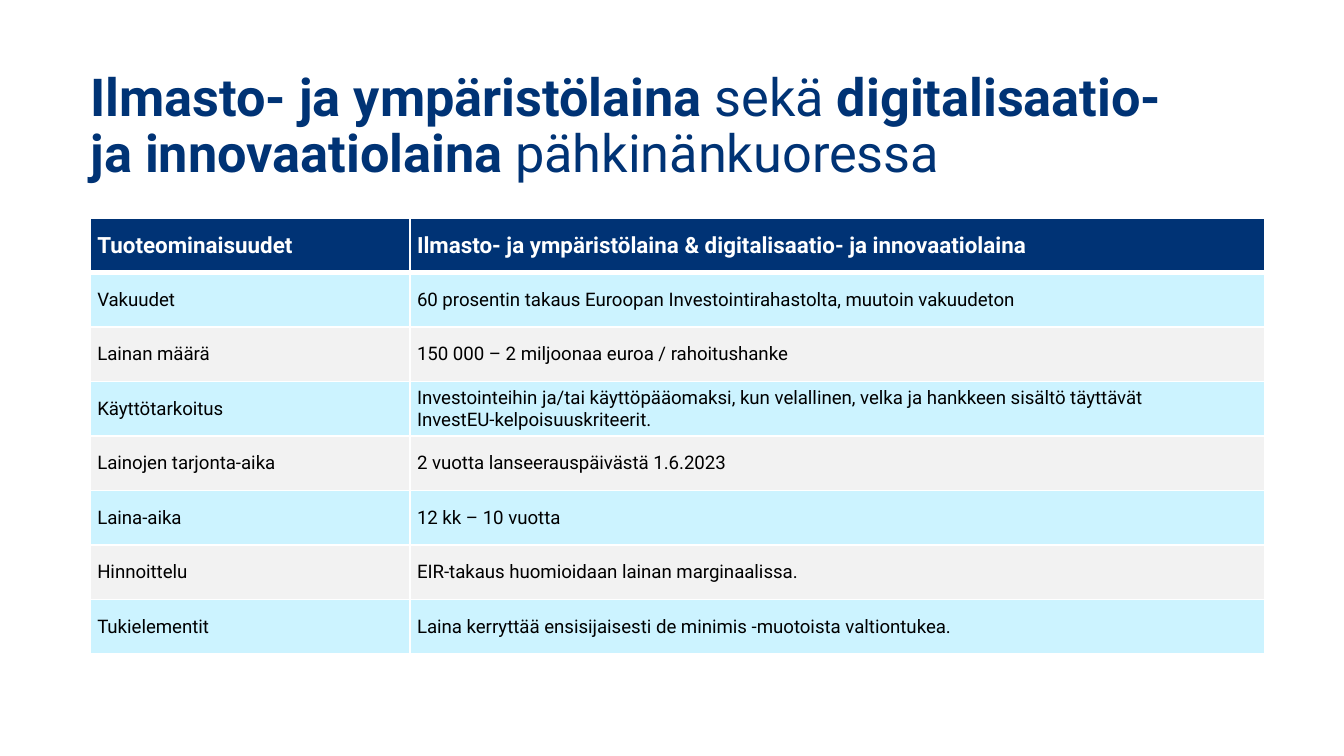
"""Build a slide that sums up two loan products in a table."""
from lxml.etree import SubElement
from pptx import Presentation
from pptx.dml.color import RGBColor
from pptx.enum.text import MSO_ANCHOR
from pptx.oxml.ns import qn
from pptx.util import Pt

NAVY = RGBColor(0x00, 0x33, 0x75)
SKY = RGBColor(0xCC, 0xF3, 0xFF)
GREY = RGBColor(0xF2, 0xF2, 0xF2)
WHITE = RGBColor(0xFF, 0xFF, 0xFF)
BLACK = RGBColor(0x00, 0x00, 0x00)
FONT = "Roboto"

TITLE = [
    ("Ilmasto- ja ympäristölaina ", True),
    ("sekä ", False),
    ("digitalisaatio- ja innovaatiolaina ", True),
    ("pähkinänkuoressa", False),
]
ROWS = [
    ("Tuoteominaisuudet", "Ilmasto- ja ympäristölaina & digitalisaatio- ja innovaatiolaina"),
    ("Vakuudet", "60 prosentin takaus Euroopan Investointirahastolta, muutoin vakuudeton"),
    ("Lainan määrä", "150 000 – 2 miljoonaa euroa / rahoitushanke"),
    ("Käyttötarkoitus", "Investointeihin ja/tai käyttöpääomaksi, kun velallinen, velka ja hankkeen "
                        "sisältö täyttävät \nInvestEU-kelpoisuuskriteerit."),
    ("Lainojen tarjonta-aika", "2 vuotta lanseerauspäivästä 1.6.2023"),
    ("Laina-aika", "12 kk – 10 vuotta"),
    ("Hinnoittelu", "EIR-takaus huomioidaan lainan marginaalissa."),
    ("Tukielementit", "Laina kerryttää ensisijaisesti de minimis -muotoista valtiontukea."),
]
LEFT, TABLE_TOP, ROW_H = 48.5, 116.9, 29.2
COL_WIDTHS = [171.3, 458]


def set_font(font, size, color, bold=None):
    font.name, font.size, font.bold = FONT, Pt(size), bold
    font.color.rgb = color


def add_borders(cell, top, bottom):
    tc_pr = cell._tc.get_or_add_tcPr()
    for side, width in (("L", 1), ("R", 1), ("T", top), ("B", bottom)):
        ln = SubElement(tc_pr, qn(f"a:ln{side}"), w=str(Pt(width)))
        fill = SubElement(ln, qn("a:solidFill"))
        SubElement(fill, qn("a:srgbClr"), val=str(WHITE))


def add_title(s):
    tf = s.shapes.add_textbox(Pt(LEFT), Pt(38.2), Pt(601), Pt(73.4)).text_frame
    tf.word_wrap = True
    tf.margin_left = tf.margin_right = tf.margin_top = tf.margin_bottom = 0
    p = tf.paragraphs[0]
    p.line_spacing = 0.9
    for text, bold in TITLE:
        r = p.add_run()
        r.text = text
        set_font(r.font, 28, NAVY, bold)


def fill_cell(cell, text, row):
    header = row == 0
    add_borders(cell, 3 if row == 1 else 1, 3 if header else 1)
    cell.fill.solid()
    cell.fill.fore_color.rgb = NAVY if header else SKY if row % 2 else GREY
    cell.vertical_anchor = MSO_ANCHOR.MIDDLE
    cell.margin_left = cell.margin_right = Pt(3.6)
    cell.margin_top = cell.margin_bottom = 0
    p = cell.text_frame.paragraphs[0]
    p.text = text
    for r in p.runs:
        set_font(r.font, 12 if header else 10, WHITE if header else BLACK, header)


def add_loan_table(s):
    table = s.shapes.add_table(len(ROWS), len(COL_WIDTHS), Pt(LEFT), Pt(TABLE_TOP),
                               Pt(sum(COL_WIDTHS)), Pt(ROW_H * len(ROWS))).table
    for column, width in zip(table.columns, COL_WIDTHS):
        column.width = Pt(width)
    for i, texts in enumerate(ROWS):
        table.rows[i].height = Pt(ROW_H)
        for j, text in enumerate(texts):
            fill_cell(table.cell(i, j), text, i)


def main():
    prs = Presentation()
    prs.slide_width, prs.slide_height = Pt(720), Pt(405)
    s = prs.slides.add_slide(prs.slide_layouts[6])
    add_title(s)
    add_loan_table(s)
    prs.save("out.pptx")


if __name__ == "__main__":
    main()
